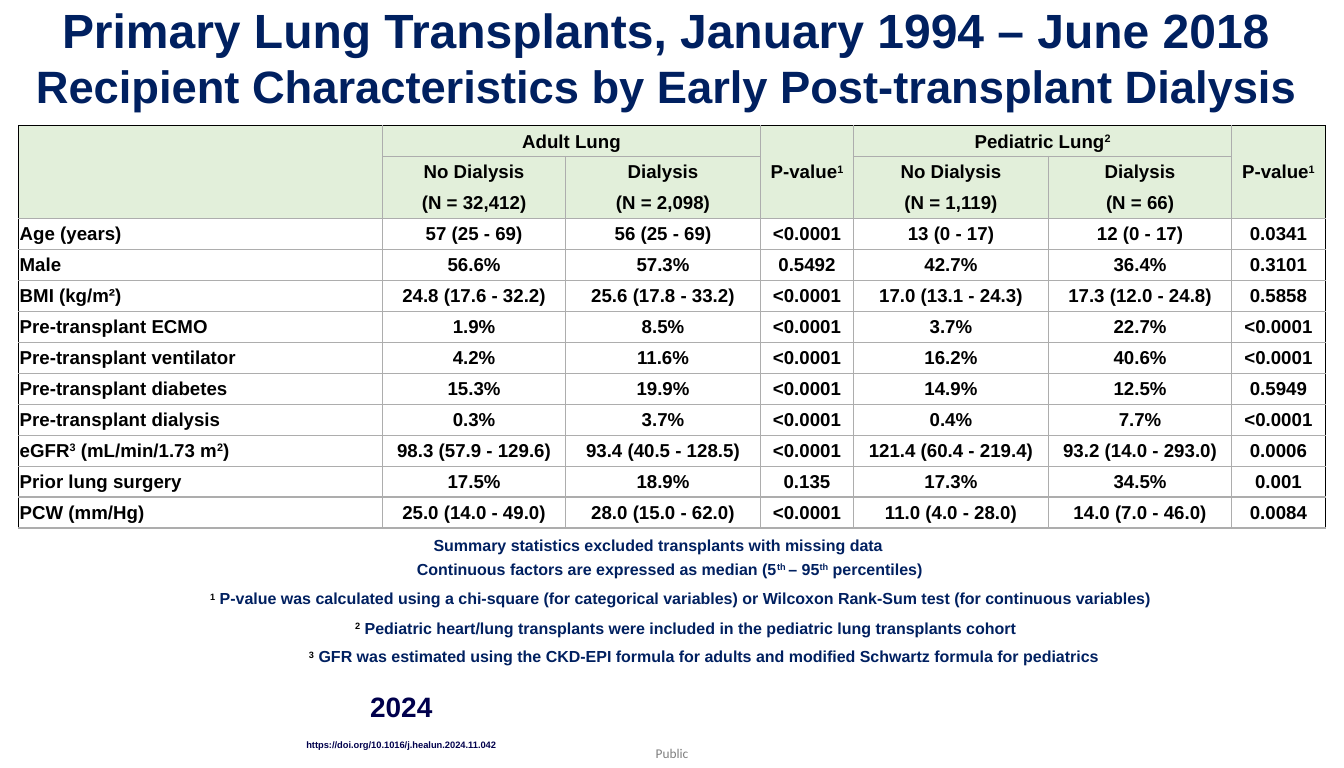
"""Build the slide on recipient characteristics by early post-transplant dialysis."""
from lxml import etree
from pptx import Presentation
from pptx import util as u
from pptx.dml.color import RGBColor
from pptx.enum import shapes, text
from pptx.oxml import ns

NAVY, INK, BLACK, WHITE = "002060", "00004C", "000000", "FFFFFF"
GREY, GREEN = "ADADAD", "E2EFDA"
LEFT, CENTER = text.PP_ALIGN.LEFT, text.PP_ALIGN.CENTER
TOP, MIDDLE = text.MSO_ANCHOR.TOP, text.MSO_ANCHOR.MIDDLE
INSETS = (7.2, 3.6, 7.2, 3.6)

TITLE = [("Primary Lung Transplants, January 1994 – June 2018", 36),
         ("Recipient Characteristics\u00a0by Early Post-transplant Dialysis", 34)]
NOTES = [
    ("Continuous factors are expressed as median (5^th ^– 95^th^ percentiles) ",
     (234, 416.2, 540, 21.6), CENTER),
    ("Summary statistics excluded transplants with missing data",
     (318.1, 398.2, 511.2, 21.6), LEFT),
    ("^1^ P-value was calculated using a chi-square (for categorical variables) "
     "or Wilcoxon Rank-Sum test (for continuous variables)",
     (150.5, 438.1, 756, 21.6), LEFT),
    ("^3^ GFR was estimated using the CKD-EPI formula for adults "
     "and modified Schwartz formula for pediatrics",
     (150.4, 481.7, 756, 21.6), CENTER),
    ("^2^ Pediatric heart/lung transplants were included "
     "in the pediatric lung transplants cohort",
     (259.2, 460.4, 748.8, 21.6), LEFT),
]
PUBLIC = ("Public", (491.8, 558.7, 26.6, 12.2))
YEAR = ("2024", (230.4, 513.7, 141.1, 32.4))
LINK = ("https://doi.org/10.1016/j.healun.2024.11.042", (227.5, 550.8, 152.6, 15.8))
HEADER = [
    ["", "Adult Lung", "", "P-value^1", "Pediatric Lung^2", "", "P-value^1"],
    ["", "No Dialysis", "Dialysis", "", "No Dialysis", "Dialysis", ""],
    ["", "(N = 32,412)", "(N = 2,098)", "", "(N = 1,119)", "(N = 66)", ""],
]
BODY = [
    ["Age\u00a0(years)", "57 (25 - 69)", "56 (25 - 69)", "<0.0001",
     "13 (0 - 17)", "12 (0 - 17)", "0.0341"],
    ["Male", "56.6%", "57.3%", "0.5492", "42.7%", "36.4%", "0.3101"],
    ["BMI\u00a0(kg/m²)", "24.8 (17.6 - 32.2)", "25.6 (17.8 - 33.2)", "<0.0001",
     "17.0 (13.1 - 24.3)", "17.3 (12.0 - 24.8)", "0.5858"],
    ["Pre-transplant ECMO", "1.9%", "8.5%", "<0.0001", "3.7%", "22.7%", "<0.0001"],
    ["Pre-transplant ventilator", "4.2%", "11.6%", "<0.0001", "16.2%", "40.6%", "<0.0001"],
    ["Pre-transplant diabetes", "15.3%", "19.9%", "<0.0001", "14.9%", "12.5%", "0.5949"],
    ["Pre-transplant\u00a0dialysis", "0.3%", "3.7%", "<0.0001", "0.4%", "7.7%", "<0.0001"],
    ["eGFR^3^\u00a0(mL/min/1.73\u00a0m^2^)", "98.3 (57.9 - 129.6)", "93.4 (40.5 - 128.5)",
     "<0.0001", "121.4 (60.4 - 219.4)", "93.2 (14.0 - 293.0)", "0.0006"],
    ["Prior lung surgery", "17.5%", "18.9%", "0.135", "17.3%", "34.5%", "0.001"],
    ["PCW (mm/Hg)", "25.0 (14.0 - 49.0)", "28.0 (15.0 - 62.0)", "<0.0001",
     "11.0 (4.0 - 28.0)", "14.0 (7.0 - 46.0)", "0.0084"],
]
COLUMNS = [272.9, 137.2, 146.2, 69.8, 146.2, 137.5, 70.1]
ROW_HEIGHT = 23.22
MERGES = [(0, 0, 2, 0), (0, 1, 0, 2), (0, 3, 2, 3), (0, 4, 0, 5), (0, 6, 2, 6)]


def color(value):
    return RGBColor.from_string(value)


def write(p, content, size, ink, align, name="Arial", bold=True):
    p.alignment = align
    p.font.size, p.font.name, p.font.bold = u.Pt(size), name, bold
    p.font.color.rgb = color(ink)
    for i, part in enumerate(content.split("^")):
        if part:
            r = p.add_run()
            r.text = part
            if i % 2:
                r.font._element.set("baseline", "30000")
            if i == 1 and content.startswith("^"):
                r.font.color.rgb = color(BLACK)


def set_frame(sp, anchor, insets, wrap):
    tf = sp.text_frame
    tf.word_wrap, tf.vertical_anchor = wrap, anchor
    tf.margin_left, tf.margin_top, tf.margin_right, tf.margin_bottom = map(u.Pt, insets)
    return tf.paragraphs[0]


def add_box(slide, box, anchor=TOP, insets=INSETS, wrap=True):
    return set_frame(slide.shapes.add_textbox(*map(u.Pt, box)), anchor, insets, wrap)


def add_link(slide, content, box):
    sp = slide.shapes.add_shape(shapes.MSO_SHAPE.RECTANGLE, *map(u.Pt, box))
    sp.shadow.inherit = False
    sp.fill.background()
    sp.line.color.rgb, sp.line.width = color(WHITE), u.Pt(0.75)
    write(set_frame(sp, MIDDLE, (2.2, 3.6, 0, 3.6), False), content, 7, INK, LEFT)
    sp.text_frame.paragraphs[0].runs[0].font.color.rgb = color(INK)


def set_border(cell, side, ink):
    ln = etree.Element(ns.qn(f"a:ln{side}"), w=str(u.Pt(1)))
    if ink:
        fill = etree.SubElement(ln, ns.qn("a:solidFill"))
        etree.SubElement(fill, ns.qn("a:srgbClr"), val=ink)
    else:
        etree.SubElement(ln, ns.qn("a:noFill"))
    cell._tc.get_or_add_tcPr().append(ln)


def add_characteristics(slide):
    rows = HEADER + BODY
    last = len(COLUMNS) - 1
    table = slide.shapes.add_table(len(rows), len(COLUMNS), u.Pt(14.1), u.Pt(94.2),
                                   u.Pt(sum(COLUMNS)), u.Pt(ROW_HEIGHT * len(rows))).table
    table.first_row = table.horz_banding = False
    for column, width in zip(table.columns, COLUMNS):
        column.width = u.Pt(width)
    for y, row in enumerate(rows):
        table.rows[y].height = u.Pt(ROW_HEIGHT)
        for x, content in enumerate(row):
            cell = table.cell(y, x)
            cell.margin_left = cell.margin_right = cell.margin_top = u.Pt(0.7)
            cell.margin_bottom = 0
            cell.vertical_anchor = MIDDLE
            write(cell.text_frame.paragraphs[0], content, 14, BLACK,
                  CENTER if x or y < len(HEADER) else LEFT)
            set_border(cell, "L", GREY if x else BLACK)
            set_border(cell, "R", GREY if x < last else BLACK)
            set_border(cell, "T", None if y == 2 else GREY if y else BLACK)
            set_border(cell, "B", None if y == 1 else GREY)
            if y < len(HEADER):
                cell.fill.solid()
                cell.fill.fore_color.rgb = color(GREEN)
            else:
                cell.fill.background()
    for top, left, bottom, right in MERGES:
        table.cell(top, left).merge(table.cell(bottom, right))


def main():
    prs = Presentation()
    prs.slide_width, prs.slide_height = u.Pt(1008), u.Pt(576)
    slide = prs.slides.add_slide(prs.slide_layouts[6])
    content, box = PUBLIC
    write(add_box(slide, box, TOP, (0, 0, 0, 0), False), content, 10, "7F7F7F", LEFT,
          "Calibri", False)
    content, box = YEAR
    write(add_box(slide, box), content, 21, INK, CENTER)
    add_link(slide, *LINK)
    p = add_box(slide, (0, -5.8, 999.4, 95.8), MIDDLE)
    for i, (line, size) in enumerate(TITLE):
        if i:
            p.add_line_break()
        write(p, line, TITLE[0][1], NAVY, CENTER)
        p.runs[-1].font.size = u.Pt(size)
    for content, box, align in NOTES:
        write(add_box(slide, box), content, 12, NAVY, align)
    add_characteristics(slide)
    prs.save("out.pptx")


if __name__ == "__main__":
    main()
